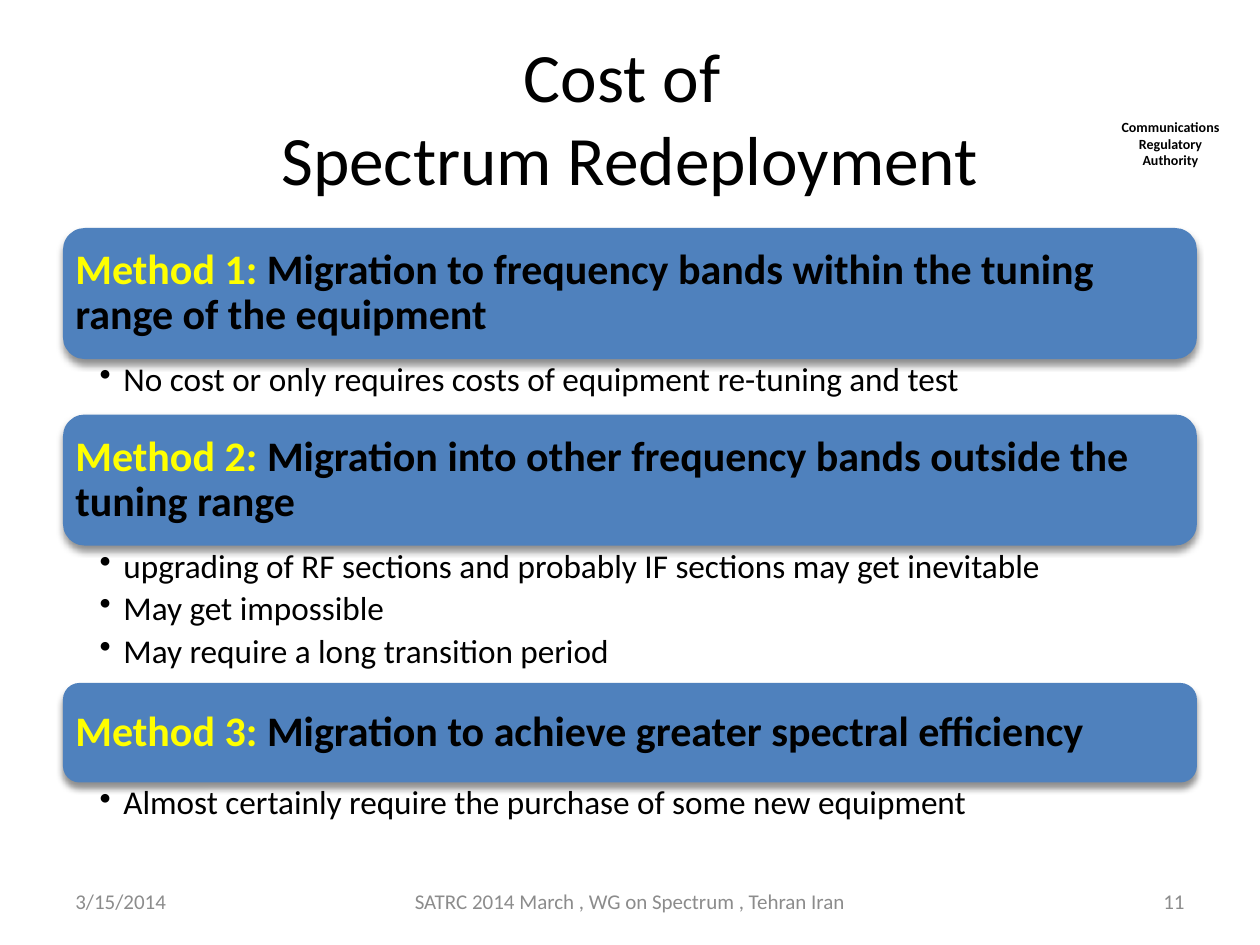
from dataclasses import dataclass

from lxml.etree import SubElement
from pptx import Presentation
from pptx.dml.color import RGBColor
from pptx.enum.shapes import MSO_SHAPE as Shape
from pptx.enum.text import MSO_ANCHOR as Anchor, PP_ALIGN as Align
from pptx.oxml.ns import qn
from pptx.util import Inches, Pt

BLACK, YELLOW, BLUE, GRAY = "000000", "FFFF00", "4F81BD", "8C8C8C"
LEFT, WIDTH = 0.5, 9
DEFAULT_INSETS = (0.1, 0.05, 0.1, 0.05)
HEADING_INSETS = (0.1, 0.1, 0.1, 0.1)
BULLET_INSETS = (0.29, 0.03, 0.19, 0.03)
BULLET_INDENT = 0.19


@dataclass(frozen=True)
class Span:
    text: str
    size: float
    color: str = BLACK
    bold: bool = False


@dataclass(frozen=True)
class Area:
    left: float
    top: float
    width: float
    height: float

    def lengths(self):
        return [Inches(value) for value in (self.left, self.top, self.width, self.height)]


@dataclass(frozen=True)
class Method:
    label: str
    heading: str
    heading_height: float
    bullets: tuple[str, ...]
    bullets_height: float


METHODS = (
    Method("Method 1: ", "Migration to frequency bands within the tuning range of the equipment", 1.04,
           ("No cost or only requires costs of equipment re-tuning and test",), 0.44),
    Method("Method 2:", " Migration into other frequency bands outside the tuning range", 1.04,
           ("upgrading of RF sections and probably IF sections may get inevitable",
            "May get impossible",
            "May require a long transition period"), 1.09),
    Method("Method 3:", " Migration to achieve greater spectral efficiency", 0.79,
           ("Almost certainly require the purchase of some new equipment",), 0.43),
)


def color(value: str) -> RGBColor:
    return RGBColor.from_string(value)


def apply(target, values: dict) -> None:
    for name, value in values.items():
        setattr(target, name, value)


def add_bullet(para) -> None:
    properties = para._p.get_or_add_pPr()
    properties.set("marL", str(Inches(BULLET_INDENT)))
    properties.set("indent", str(-Inches(BULLET_INDENT)))
    SubElement(properties, qn("a:buChar"), char="•")


def add_text(page, area: Area, paragraphs: list[list[Span]], align=Align.LEFT, anchor=Anchor.MIDDLE,
             insets=DEFAULT_INSETS, spacing: dict | None = None, bulleted: bool = False) -> None:
    frame = page.shapes.add_textbox(*area.lengths()).text_frame
    margins = zip(("margin_left", "margin_top", "margin_right", "margin_bottom"), insets)
    apply(frame, {"word_wrap": True, "vertical_anchor": anchor,
                  **{name: Inches(value) for name, value in margins}})
    for index, spans in enumerate(paragraphs):
        para = frame.add_paragraph() if index else frame.paragraphs[0]
        apply(para, {"alignment": align, **(spacing or {})})
        if bulleted:
            add_bullet(para)
        for span in spans:
            for line_number, line in enumerate(span.text.split("\n")):
                if line_number:
                    para.add_line_break()
                run = para.add_run()
                run.text = line
                apply(run.font, {"name": "Calibri", "size": Pt(span.size), "bold": span.bold})
                run.font.color.rgb = color(span.color)


def add_banner(page, area: Area) -> None:
    banner = page.shapes.add_shape(Shape.ROUNDED_RECTANGLE, *area.lengths())
    banner.shadow.inherit = False
    banner.fill.solid()
    banner.fill.fore_color.rgb = color(BLUE)
    banner.line.fill.background()
    effects = banner._element.spPr.find(qn("a:effectLst"))
    shadow = SubElement(effects, qn("a:outerShdw"), blurRad=str(Pt(4)), dist=str(Pt(3)),
                        dir="5400000", rotWithShape="0")
    tint = SubElement(shadow, qn("a:srgbClr"), val=BLACK)
    SubElement(tint, qn("a:alpha"), val="43000")


def add_method(page, method: Method, top: float) -> float:
    heading_area = Area(LEFT, top, WIDTH, method.heading_height)
    add_banner(page, heading_area)
    add_text(page, heading_area,
             [[Span(method.label, 24, YELLOW, True), Span(method.heading, 24, BLACK, True)]],
             insets=HEADING_INSETS, spacing={"line_spacing": 0.9, "space_after": Pt(8.4)})
    bullets_top = top + method.heading_height
    add_text(page, Area(LEFT, bullets_top, WIDTH, method.bullets_height),
             [[Span(bullet, 19)] for bullet in method.bullets],
             anchor=Anchor.TOP, insets=BULLET_INSETS, bulleted=True,
             spacing={"level": 1, "line_spacing": 0.9, "space_after": Pt(3.8)})
    return bullets_top + method.bullets_height


def main() -> None:
    deck = Presentation()
    apply(deck, {"slide_width": Inches(10), "slide_height": Inches(7.5)})
    page = deck.slides.add_slide(deck.slide_layouts[6])

    add_text(page, Area(8.78, 0.89, 1.02, 0.5),
             [[Span("Communications Regulatory Authority", 8, bold=True)]],
             align=Align.CENTER, anchor=Anchor.TOP)
    add_text(page, Area(LEFT, 0.3, WIDTH, 1.25),
             [[Span("Cost of \nSpectrum Redeployment", 39.6)]], align=Align.CENTER)

    top = 1.81
    for method in METHODS:
        top = add_method(page, method, top)

    footers = (
        ("3/15/2014", 0.5, 2.33, Align.LEFT),
        ("SATRC 2014 March , WG on Spectrum , Tehran Iran", 3.11, 3.78, Align.CENTER),
        ("11", 7.17, 2.33, Align.RIGHT),
    )
    for text, left, width, align in footers:
        add_text(page, Area(left, 6.95, width, 0.4), [[Span(text, 12, GRAY)]], align=align)

    deck.save("out.pptx")


if __name__ == "__main__":
    main()
